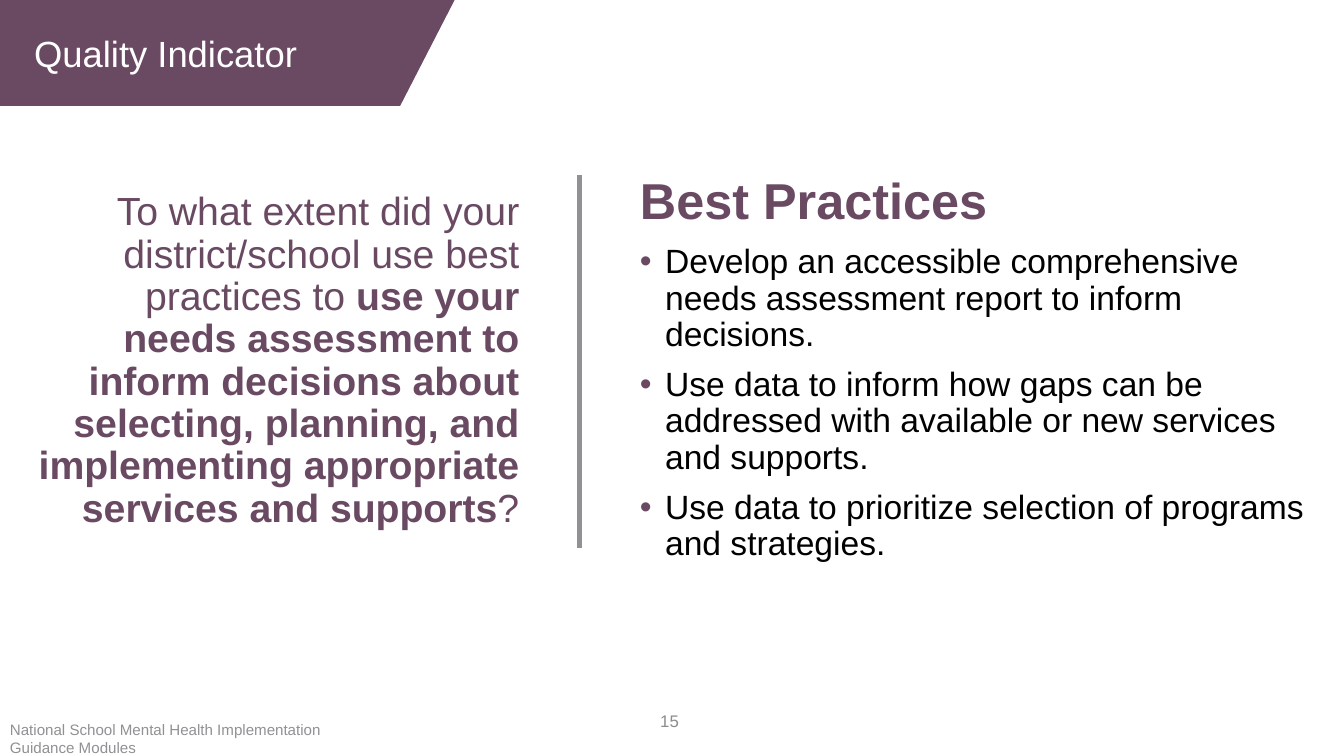
import dataclasses
import typing

import lxml.etree
import pptx
import pptx.dml.color
import pptx.enum.shapes
import pptx.enum.text
import pptx.oxml.ns
import pptx.slide
import pptx.text.text
import pptx.util

COLUMNS = 40
ROWS = 22.5
CELL = pptx.util.Inches(1 / 3)

Align = pptx.enum.text.PP_ALIGN
Anchor = pptx.enum.text.MSO_ANCHOR


@dataclasses.dataclass(frozen=True)
class Theme:
    font: str = "Arial"
    plum: str = "6A4A62"
    white: str = "FFFFFF"
    black: str = "000000"
    page_gray: str = "8C8C8C"
    rule_gray: str = "919195"
    banner_size: float = 26
    question_size: float = 28
    heading_size: float = 36
    practice_size: float = 24
    page_size: float = 12
    footer_size: float = 10.8
    rule_width: float = 3
    tight_spacing: float = 0.9
    paragraph_gap: float = 10


THEME = Theme()


class Run(typing.NamedTuple):
    text: str
    bold: bool = False


@dataclasses.dataclass(frozen=True)
class Line:
    runs: tuple[Run, ...]
    size: float
    color: str
    align: Align = Align.LEFT
    spacing: float = 1.0
    bulleted: bool = False


@dataclasses.dataclass(frozen=True)
class Block:
    column: float
    row: float
    columns: float
    rows: float
    lines: tuple[Line, ...]
    anchor: Anchor = Anchor.TOP


def grid(cells: float) -> pptx.util.Emu:
    return pptx.util.Emu(round(cells * CELL))


def rgb(color: str) -> pptx.dml.color.RGBColor:
    return pptx.dml.color.RGBColor.from_string(color)


def add_bullet(paragraph: pptx.text.text._Paragraph) -> None:
    qualify = pptx.oxml.ns.qn
    properties = paragraph._p.get_or_add_pPr()
    indent = pptx.util.Inches(0.25)
    properties.set("marL", str(indent))
    properties.set("indent", str(-indent))
    bullet_color = lxml.etree.SubElement(properties, qualify("a:buClr"))
    lxml.etree.SubElement(bullet_color, qualify("a:srgbClr"), val=THEME.plum)
    lxml.etree.SubElement(properties, qualify("a:buFont"), typeface=THEME.font)
    lxml.etree.SubElement(properties, qualify("a:buChar"), char="•")


def write_line(paragraph: pptx.text.text._Paragraph, line: Line, first: bool) -> None:
    if line.bulleted:
        add_bullet(paragraph)
    paragraph.alignment = line.align
    paragraph.line_spacing = line.spacing
    paragraph.space_before = pptx.util.Pt(0 if first else THEME.paragraph_gap)
    for part in line.runs:
        run = paragraph.add_run()
        run.text = part.text
        run.font.name = THEME.font
        run.font.size = pptx.util.Pt(line.size)
        run.font.bold = part.bold
        run.font.color.rgb = rgb(line.color)


def add_block(slide: pptx.slide.Slide, block: Block) -> None:
    box = slide.shapes.add_textbox(
        grid(block.column), grid(block.row), grid(block.columns), grid(block.rows)
    )
    frame = box.text_frame
    frame.word_wrap = True
    frame.vertical_anchor = block.anchor
    for index, line in enumerate(block.lines):
        paragraph = frame.add_paragraph() if index else frame.paragraphs[0]
        write_line(paragraph, line, index == 0)


def add_banner(slide: pptx.slide.Slide, top: float, bottom: float, rows: float) -> None:
    builder = slide.shapes.build_freeform(0, 0)
    corners = [(top, 0), (bottom, rows), (0, rows)]
    builder.add_line_segments([(grid(x), grid(y)) for x, y in corners], close=True)
    banner = builder.convert_to_shape()
    banner.shadow.inherit = False
    banner.fill.solid()
    banner.fill.fore_color.rgb = rgb(THEME.plum)
    banner.line.fill.background()


def add_divider(slide: pptx.slide.Slide, column: float, top: float, bottom: float) -> None:
    divider = slide.shapes.add_connector(
        pptx.enum.shapes.MSO_CONNECTOR.STRAIGHT,
        grid(column), grid(top), grid(column), grid(bottom),
    )
    divider.line.color.rgb = rgb(THEME.rule_gray)
    divider.line.width = pptx.util.Pt(THEME.rule_width)
    properties = divider._element.spPr
    lxml.etree.SubElement(properties, pptx.oxml.ns.qn("a:effectLst"))


QUESTION = Line(
    (
        Run("To what extent did your district/school use best practices to "),
        Run(
            "use your needs assessment to inform decisions about selecting, "
            "planning, and implementing appropriate services and supports",
            bold=True,
        ),
        Run("?"),
    ),
    THEME.question_size, THEME.plum, Align.RIGHT, THEME.tight_spacing,
)

HEADING = Line(
    (Run("Best Practices", bold=True),),
    THEME.heading_size, THEME.plum, spacing=THEME.tight_spacing,
)

PRACTICES = tuple(
    Line(
        (Run(text),), THEME.practice_size, THEME.black,
        spacing=THEME.tight_spacing, bulleted=True,
    )
    for text in (
        "Develop an accessible comprehensive needs assessment report to inform decisions.",
        "Use data to inform how gaps can be addressed with available or new services and supports.",
        "Use data to prioritize selection of programs and strategies.",
    )
)

BANNER_TITLE = Line((Run("Quality Indicator"),), THEME.banner_size, THEME.white)
PAGE_NUMBER = Line((Run("15"),), THEME.page_size, THEME.page_gray, Align.RIGHT)
FOOTER = Line(
    (Run("National School Mental Health Implementation Guidance Modules"),),
    THEME.footer_size, THEME.rule_gray,
)

BLOCKS = (
    Block(11.5, 20.85, 9, 1.2, (PAGE_NUMBER,), Anchor.MIDDLE),
    Block(0.72, 0.78, 9.54, 1.62, (BANNER_TITLE,)),
    Block(0.5, 2.67, 15.25, 16.17, (QUESTION,), Anchor.MIDDLE),
    Block(18.75, 3.6, 20.9, 14.8, (HEADING, *PRACTICES), Anchor.MIDDLE),
    Block(0, 21.3, 11.43, 1.2, (FOOTER,)),
)


def main() -> None:
    presentation = pptx.Presentation()
    presentation.slide_width = grid(COLUMNS)
    presentation.slide_height = grid(ROWS)
    slide = presentation.slides.add_slide(presentation.slide_layouts[6])
    add_banner(slide, top=13.53, bottom=11.91, rows=3.15)
    add_divider(slide, column=17.25, top=5.2, bottom=16.32)
    for block in BLOCKS:
        add_block(slide, block)
    presentation.save("out.pptx")


if __name__ == "__main__":
    main()
